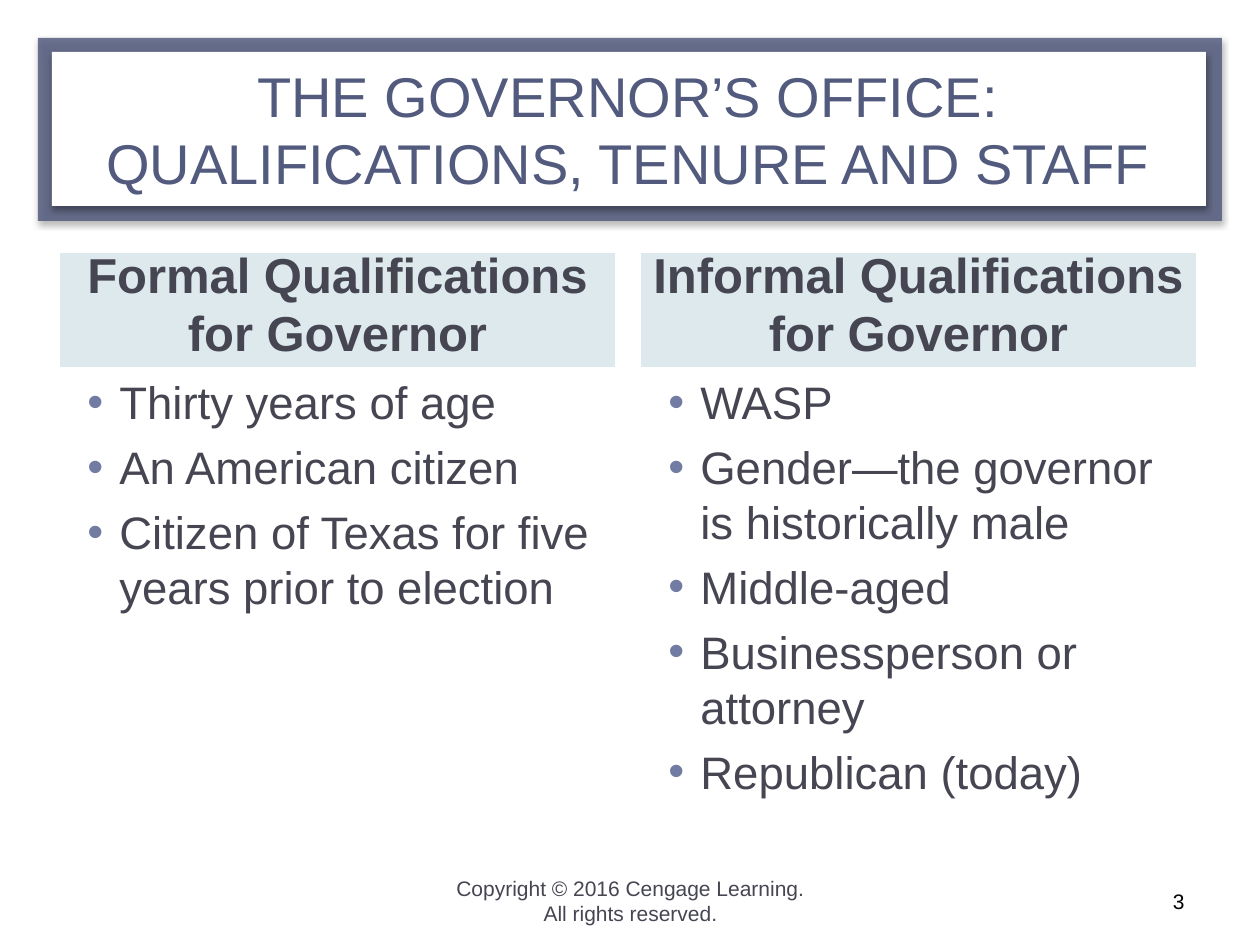
from lxml import etree
from pptx import Presentation, util as u
from pptx.dml.color import RGBColor
from pptx.enum import shapes, text
from pptx.oxml import ns

PX = u.Inches(1) / 126
WHITE = RGBColor(0xFF, 0xFF, 0xFF)
BLACK = RGBColor(0, 0, 0)
NAVY = RGBColor(0x52, 0x5B, 0x7E)
PALE_BLUE = RGBColor(0xDD, 0xE9, 0xEC)
SLATE = RGBColor(0x46, 0x46, 0x53)
BULLET = RGBColor(0x72, 0x7C, 0xA3)
CENTER = text.PP_ALIGN.CENTER
MIDDLE = text.MSO_ANCHOR.MIDDLE

presentation = Presentation()
presentation.slide_width = round(1260 * PX)
presentation.slide_height = round(945 * PX)
slide = presentation.slides.add_slide(presentation.slide_layouts[6])


def add_panel(box, fill, kind=shapes.MSO_SHAPE.RECTANGLE):
    shape = slide.shapes.add_shape(kind, *[round(value * PX) for value in box])
    shape.shadow.inherit = False
    shape.fill.solid()
    shape.fill.fore_color.rgb = fill
    shape.line.fill.background()
    return shape


def add_text(shape, lines, size, color, align, anchor, bold=False, bullets=False):
    frame = shape.text_frame
    frame.word_wrap = True
    frame.vertical_anchor = anchor
    for index, line in enumerate(lines):
        paragraph = frame.paragraphs[0] if index == 0 else frame.add_paragraph()
        paragraph.alignment = align
        if index:
            paragraph.space_before = u.Pt(6)
        if bullets:
            properties = paragraph._p.get_or_add_pPr()
            properties.set("marL", str(round(48 * PX)))
            properties.set("indent", str(round(-32 * PX)))
            bullet_color = etree.SubElement(properties, ns.qn("a:buClr"))
            etree.SubElement(bullet_color, ns.qn("a:srgbClr"), val=str(BULLET))
            etree.SubElement(properties, ns.qn("a:buFont"), typeface="Arial")
            etree.SubElement(properties, ns.qn("a:buChar"), char="•")
        run = paragraph.add_run()
        run.text = line
        run.font.name = "Arial"
        run.font.size = u.Pt(size)
        run.font.bold = bold
        run.font.color.rgb = color


page = add_panel((13, 14, 1235, 919), WHITE, shapes.MSO_SHAPE.ROUNDED_RECTANGLE)
page.adjustments[0] = 0.02

title_frame = add_panel((38, 38, 1184, 183), NAVY)
frame_color = title_frame.fill._xPr.find(".//" + ns.qn("a:srgbClr"))
etree.SubElement(frame_color, ns.qn("a:alpha"), val="83000")
title_panel = add_panel((52, 52, 1154, 154), WHITE)
for shape in (title_frame, title_panel):
    effects = shape._element.spPr.find(ns.qn("a:effectLst"))
    shadow = etree.SubElement(
        effects, ns.qn("a:outerShdw"), blurRad=str(u.Pt(3.5)),
        dist=str(u.Pt(2.2)), dir="5400000", rotWithShape="0")
    shadow_color = etree.SubElement(shadow, ns.qn("a:srgbClr"), val=str(BLACK))
    etree.SubElement(shadow_color, ns.qn("a:alpha"), val="32000")

title = slide.shapes.add_textbox(*[round(value * PX) for value in (59, 57, 1138, 143)])
add_text(title, ["THE GOVERNOR’S OFFICE: QUALIFICATIONS, TENURE AND STAFF"],
         32, NAVY, CENTER, MIDDLE)

columns = [
    ("Formal Qualifications for Governor",
     ["Thirty years of age", "An American citizen",
      "Citizen of Texas for five years prior to election"]),
    ("Informal Qualifications for Governor",
     ["WASP", "Gender—the governor is historically male", "Middle-aged",
      "Businessperson or attorney", "Republican (today)"]),
]
for index, (heading, items) in enumerate(columns):
    left = 59 + index * 581
    header = add_panel((left, 252, 557, 116), PALE_BLUE)
    header.line.color.rgb = WHITE
    header.line.width = u.Pt(0.75)
    header.text_frame.margin_left = header.text_frame.margin_right = round(11 * PX)
    add_text(header, [heading], 28, SLATE, CENTER, text.MSO_ANCHOR.BOTTOM, bold=True)
    body = slide.shapes.add_textbox(*[round(value * PX) for value in (left, 368, 557, 476)])
    add_text(body, items, 26, SLATE, text.PP_ALIGN.LEFT, text.MSO_ANCHOR.TOP, bullets=True)

footers = [
    ("Copyright © 2016 Cengage Learning. All rights reserved.", 431, 399, SLATE, CENTER),
    ("3", 903, 294, BLACK, text.PP_ALIGN.RIGHT),
]
for line, left, width, color, align in footers:
    footer = slide.shapes.add_textbox(*[round(value * PX) for value in (left, 876, width, 50)])
    add_text(footer, [line], 12, color, align, MIDDLE)

presentation.save("out.pptx")
